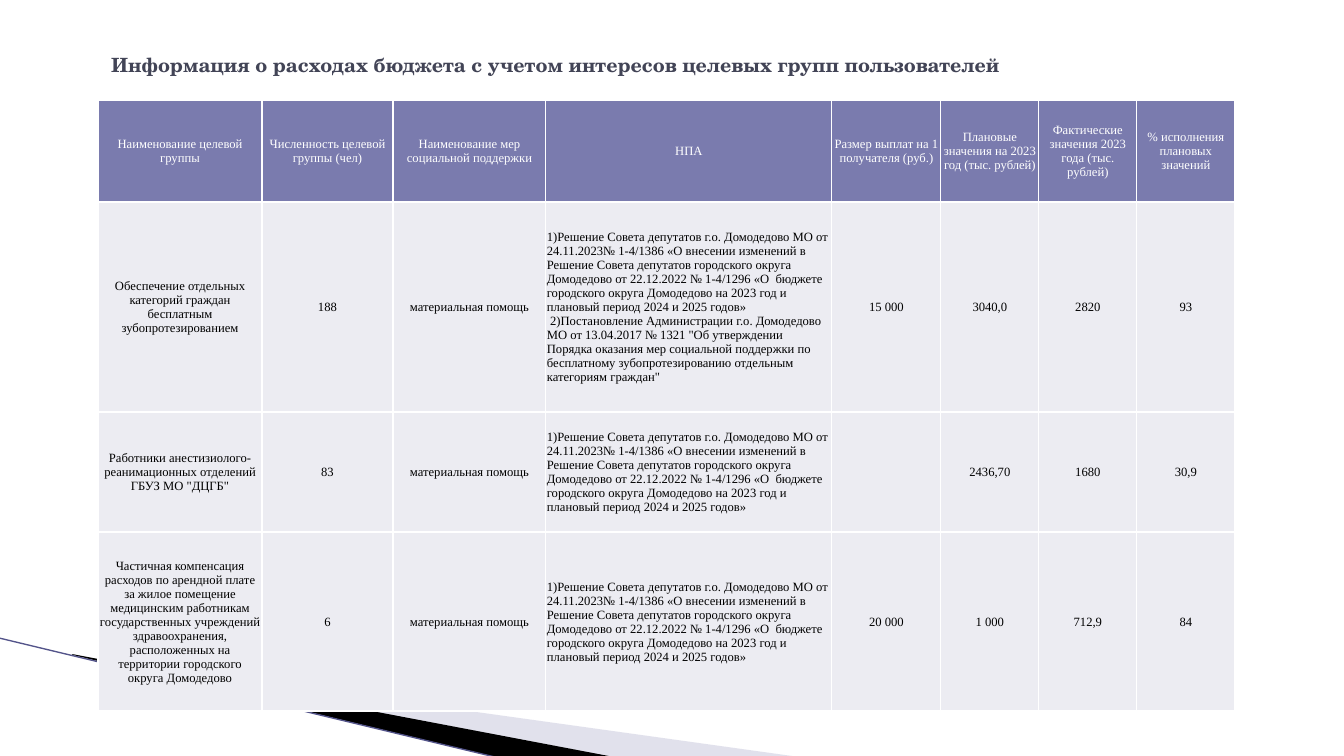
from lxml.etree import SubElement
from pptx import Presentation
from pptx.dml.color import RGBColor
from pptx.enum.shapes import MSO_CONNECTOR
from pptx.enum.text import MSO_ANCHOR, PP_ALIGN
from pptx.oxml.ns import qn
from pptx.util import Pt

# Content
TITLE = "Информация о расходах бюджета с учетом интересов целевых групп пользователей"
HEAD = [
    "Наименование целевой группы",
    "Численность целевой группы (чел)",
    "Наименование мер социальной поддержки",
    "НПА",
    "Размер выплат на 1 получателя (руб.)",
    "Плановые значения на 2023 год (тыс. рублей)",
    "Фактические значения 2023 года (тыс. рублей)",
    "% исполнения плановых значений",
]
AID = "материальная помощь"
LAW = (
    "1)Решение Совета депутатов г.о. Домодедово МО от 24.11.2023№ 1-4/1386 "
    "«О внесении изменений в Решение Совета депутатов городского округа Домодедово "
    "от 22.12.2022 № 1-4/1296 «О  бюджете городского округа Домодедово на 2023 год "
    "и плановый период 2024 и 2025 годов»"
)
ORDER = (
    " 2)Постановление Администрации г.о. Домодедово МО от 13.04.2017 № 1321 "
    '"Об утверждении Порядка оказания мер социальной поддержки по бесплатному '
    'зубопротезированию отдельным категориям граждан"'
)
ROWS = [
    HEAD,
    ["Обеспечение отдельных категорий граждан бесплатным зубопротезированием",
     "188", AID, LAW + "\n" + ORDER, "15 000", "3040,0", "2820", "93"],
    ['Работники анестизиолого-реанимационных отделений ГБУЗ МО "ДЦГБ"',
     "83", AID, LAW, "", "2436,70", "1680", "30,9"],
    ["Частичная компенсация расходов по арендной плате за жилое помещение "
     "медицинским работникам государственных учреждений здравоохранения, "
     "расположенных на территории городского округа Домодедово",
     "6", AID, LAW, "20 000", "1 000", "712,9", "84"],
]
LAW_COL = HEAD.index("НПА")

# Layout in px: 100.8 px to the inch
WIDTHS = [164, 131, 153, 286, 109, 98, 98, 98]
HEIGHTS = [102, 210, 120, 179]
WEDGES = [  # corners, colour, opacity in percent
    ([(74, 656), (799, 757), (613, 757), (74, 655)], "B6B6D1", 40),
    ([(72, 654), (614, 757), (500, 758), (73, 655)], "000000", 100),
]
SCALE = 914400 / 100.8


def px(n):
    return round(n * SCALE)


def rgb(code):
    return RGBColor.from_string(code)


def write(frame, text, font="Times New Roman", size=9, color="000000",
          bold=False, align=PP_ALIGN.CENTER):
    frame.word_wrap = True
    frame.text = text
    for para in frame.paragraphs:
        para.alignment = align
        for style in [para.font] + [run.font for run in para.runs]:
            style.name, style.size, style.bold = font, Pt(size), bold
            style.color.rgb = rgb(color)


def border(cell, color, width):
    props = cell._tc.get_or_add_tcPr()
    for side in ("lnL", "lnR", "lnT", "lnB"):
        line = SubElement(props, qn("a:" + side), w=str(Pt(width)))
        fill = SubElement(line, qn("a:solidFill"))
        SubElement(fill, qn("a:srgbClr"), val=color)


deck = Presentation()
deck.slide_width, deck.slide_height = px(1344), px(756)
slide = deck.slides.add_slide(deck.slide_layouts[5])
shapes = slide.shapes

# Corner wedges
for points, color, alpha in WEDGES:
    path = shapes.build_freeform(*points[0], scale=SCALE)
    path.add_line_segments(points[1:], close=True)
    wedge = path.convert_to_shape()
    wedge.shadow.inherit = False
    wedge.fill.solid()
    wedge.fill.fore_color.rgb = rgb(color)
    wedge.line.fill.background()
    if alpha < 100:
        tint = wedge._element.spPr.find(".//" + qn("a:srgbClr"))
        SubElement(tint, qn("a:alpha"), val=str(alpha * 1000))

# Corner line
edge = shapes.add_connector(MSO_CONNECTOR.STRAIGHT, px(-1), px(638), px(499), px(758))
edge.line.color.rgb = rgb("53548A")
edge.line.width = Pt(0.95)
SubElement(edge._element.spPr, qn("a:effectLst"))

# Title, in front of the wedges
title = shapes.title
title.left, title.top, title.width, title.height = px(101), px(30), px(1025), px(70)
title.text_frame.vertical_anchor = MSO_ANCHOR.MIDDLE
write(title.text_frame, TITLE, font="TeX Gyre Schola", size=14, color="424456",
      bold=True, align=PP_ALIGN.LEFT)
title._element.getparent().append(title._element)

# Table
table = shapes.add_table(len(ROWS), len(HEAD), px(98), px(100),
                         px(sum(WIDTHS)), px(sum(HEIGHTS))).table
for col, width in zip(table.columns, WIDTHS):
    col.width = px(width)
for row, height in zip(table.rows, HEIGHTS):
    row.height = px(height)
for r, texts in enumerate(ROWS):
    for c, text in enumerate(texts):
        cell = table.cell(r, c)
        cell.margin_left = cell.margin_right = cell.margin_top = px(1)
        cell.margin_bottom = 0
        cell.vertical_anchor = MSO_ANCHOR.MIDDLE
        border(cell, "FFFFFF", 1)
        cell.fill.solid()
        cell.fill.fore_color.rgb = rgb("ECECF2" if r else "7A7BAE")
        write(cell.text_frame, text, color="000000" if r else "FFFFFF",
              align=PP_ALIGN.LEFT if r and c == LAW_COL else PP_ALIGN.CENTER)

deck.save("out.pptx")
